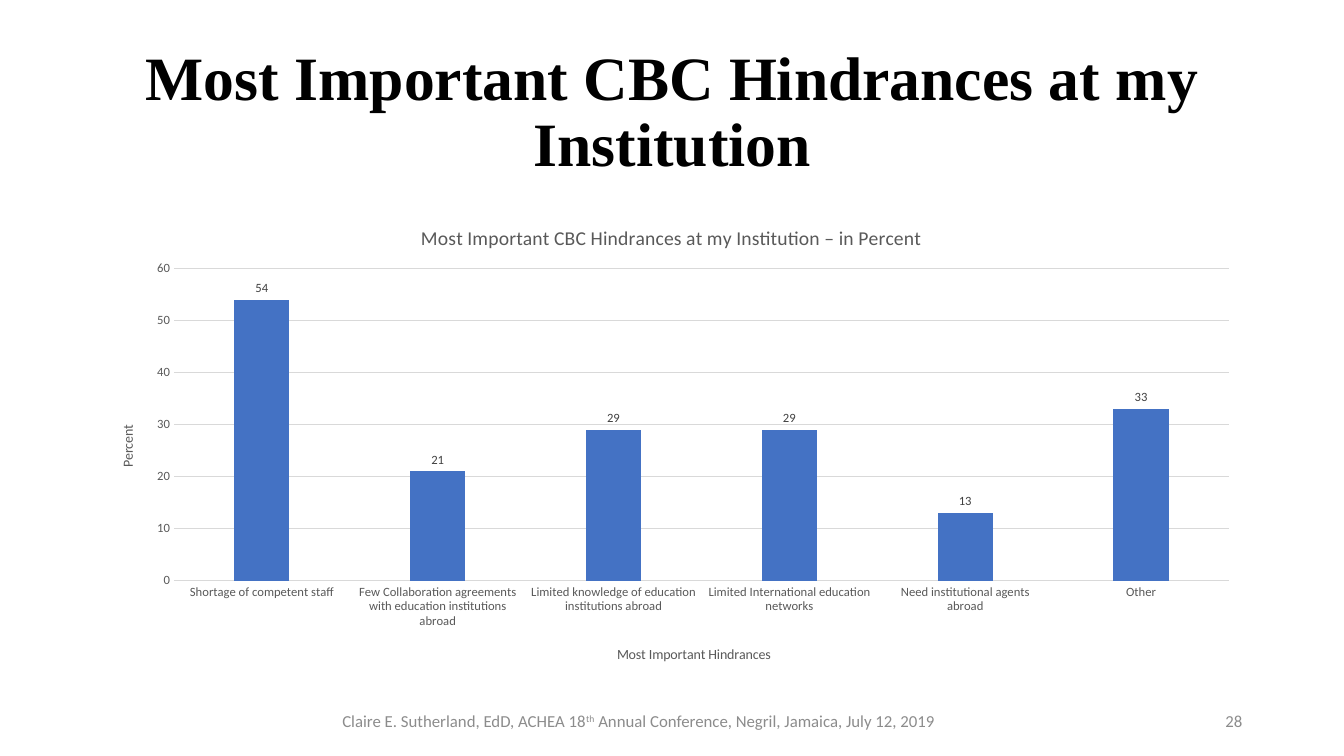
from lxml import etree
from pptx import Presentation
from pptx.chart.data import CategoryChartData
from pptx.dml.color import RGBColor
from pptx.enum.chart import XL_CHART_TYPE, XL_LABEL_POSITION, XL_TICK_MARK
from pptx.enum.text import MSO_ANCHOR, PP_ALIGN
from pptx.oxml.ns import qn
from pptx.util import Inches, Pt

COLUMN = XL_CHART_TYPE.COLUMN_CLUSTERED
OUTSIDE_END = XL_LABEL_POSITION.OUTSIDE_END
NO_TICK = XL_TICK_MARK.NONE
MIDDLE = MSO_ANCHOR.MIDDLE
CENTER, RIGHT = PP_ALIGN.CENTER, PP_ALIGN.RIGHT

TITLE = "Most Important CBC Hindrances at my Institution"
FOOTER = [
    ("Claire E. Sutherland, EdD, ACHEA 18", False),
    ("th", True),
    (" Annual Conference, Negril, Jamaica, July 12, 2019", False),
]
PAGE = "28"
CHART_TITLE = "Most Important CBC Hindrances at my Institution – in Percent"
CATEGORY_TITLE = "Most Important Hindrances"
VALUE_TITLE = "Percent"
HINDRANCES = [
    ("Shortage of competent staff", 54),
    ("Few Collaboration agreements with education institutions abroad", 21),
    ("Limited knowledge of education institutions abroad", 29),
    ("Limited International education networks", 29),
    ("Need institutional agents abroad", 13),
    ("Other", 33),
]
GREY, GRID = "595959", "D9D9D9"


def rgb(value):
    return RGBColor.from_string(value)


def style(font, size, color, name="Calibri", bold=False):
    font.size, font.name, font.bold = Pt(size), name, bold
    font.color.rgb = rgb(color)


def add_text(s, box, runs, align, size, color, name="Calibri", bold=False):
    tf = s.shapes.add_textbox(*map(Inches, box)).text_frame
    tf.word_wrap = True
    tf.vertical_anchor = MIDDLE
    p = tf.paragraphs[0]
    p.alignment = align
    for text, raised in runs:
        r = p.add_run()
        r.text = text
        style(r.font, size, color, name, bold)
        if raised:
            r._r.get_or_add_rPr().set("baseline", "30000")
    return p


def place(parent, index, inner=False, **fractions):
    for old in parent.findall(qn("c:layout")):
        parent.remove(old)
    layout = etree.Element(qn("c:layout"))
    manual = etree.SubElement(layout, qn("c:manualLayout"))
    settings = [("layoutTarget", "inner")] if inner else []
    settings += [("xMode", "edge"), ("yMode", "edge"), *fractions.items()]
    for tag, value in settings:
        etree.SubElement(manual, qn("c:" + tag)).set("val", str(value))
    parent.insert(index, layout)


def set_title(title, text, size, x, y):
    title.text_frame.text = text
    style(title.text_frame.paragraphs[0].runs[0].font, size, GREY)
    place(title._element, 1, x=x, y=y)


def add_hindrance_chart(s):
    data = CategoryChartData(number_format="0")
    data.categories = [name for name, _ in HINDRANCES]
    data.add_series("Series 1", [value for _, value in HINDRANCES])
    box = map(Inches, (0.92, 2, 11.5, 4.76))
    chart = s.shapes.add_chart(COLUMN, *box, data).chart
    style(chart.font, 10, "000000")
    chart.has_legend = False
    chart.has_title = True
    set_title(chart.chart_title, CHART_TITLE, 14, 0.28, 0.04)

    cat, val = chart.category_axis, chart.value_axis
    for axis in (cat, val):
        axis.major_tick_mark = axis.minor_tick_mark = NO_TICK
        style(axis.tick_labels.font, 9, GREY)
    set_title(cat.axis_title, CATEGORY_TITLE, 10, 0.45, 0.92)
    set_title(val.axis_title, VALUE_TITLE, 10, 0.02, 0.46)
    val.minimum_scale, val.maximum_scale, val.major_unit = 0, 60, 10
    val.format.line.fill.background()
    for line in (cat.format.line, val.major_gridlines.format.line):
        line.color.rgb = rgb(GRID)
        line.width = Pt(0.75)

    plot = chart.plots[0]
    plot.gap_width, plot.overlap = 219, -27
    plot.vary_by_categories = False
    fill = plot.series[0].format.fill
    fill.solid()
    fill.fore_color.rgb = rgb("4472C4")
    plot.has_data_labels = True
    labels = plot.data_labels
    labels.show_value = True
    labels.position = OUTSIDE_END
    style(labels.font, 9, "404040")
    plot_area = chart._chartSpace.chart.plotArea
    place(plot_area, 0, inner=True, x=0.07, y=0.14, w=0.91, h=0.65)


def main():
    prs = Presentation()
    prs.slide_width, prs.slide_height = Inches(13.33), Inches(7.5)
    s = prs.slides.add_slide(prs.slide_layouts[6])
    p = add_text(s, (0.92, 0.4, 11.5, 1.45), [(TITLE, False)], CENTER,
                 44, "000000", "Times New Roman", True)
    p.line_spacing = 0.9
    add_hindrance_chart(s)
    add_text(s, (1.33, 6.95, 10.01, 0.4), FOOTER, CENTER, 12, "8C8C8C")
    add_text(s, (9.42, 6.95, 3, 0.4), [(PAGE, False)], RIGHT, 12, "8C8C8C")
    prs.save("out.pptx")


if __name__ == "__main__":
    main()
